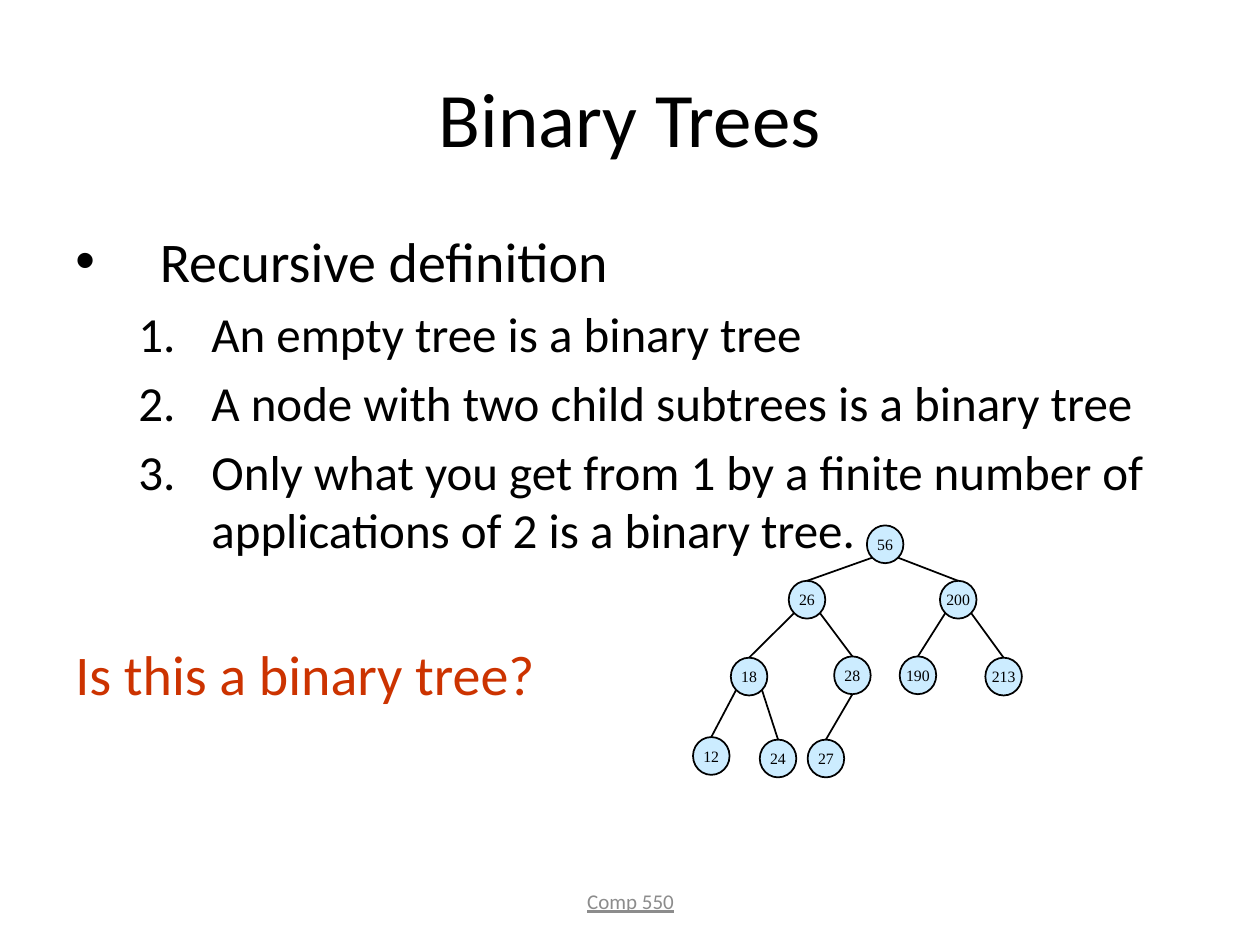
from lxml.etree import SubElement
from pptx import Presentation
from pptx.dml.color import RGBColor
from pptx.enum.shapes import MSO_CONNECTOR, MSO_SHAPE
from pptx.enum.text import MSO_ANCHOR, PP_ALIGN
from pptx.oxml.ns import qn
from pptx.util import Inches, Pt

TITLE = "Binary Trees"
FOOTER = "Comp 550"
BULLET = {"margin": 0.67, "indent": -0.67, "before": 6.4,
          "mark": ("a:buChar", {"char": "•"}), "size": 32, "color": "000000"}
NUMBERED = {"margin": 1.08, "indent": -0.58, "before": 5.6,
            "mark": ("a:buAutoNum", {"type": "arabicPeriod"}), "size": 28, "color": "000000"}
QUESTION = {"margin": 0.67, "indent": -0.67, "before": 46,
            "mark": ("a:buNone", {}), "size": 32, "color": "CC3300"}
BODY = [
    ("Recursive definition", BULLET),
    ("An empty tree is a binary tree", NUMBERED),
    ("A node with two child subtrees is a binary tree", NUMBERED),
    ("Only what you get from 1 by a finite number of applications of 2 is a binary tree.", NUMBERED),
    ("Is this a binary tree?", QUESTION),
]
NODES = {
    "56": (6.88, 4.17),
    "26": (6.26, 4.61), "200": (7.46, 4.61),
    "18": (5.8, 5.22), "28": (6.62, 5.21), "190": (7.14, 5.21), "213": (7.82, 5.22),
    "12": (5.5, 5.85), "24": (6.03, 5.87), "27": (6.41, 5.87),
}
CHILDREN = {
    "56": ["26", "200"], "26": ["18", "28"], "200": ["190", "213"],
    "18": ["12", "24"], "28": ["27"],
}
NODE_WIDTH, NODE_HEIGHT = 0.29, 0.3
DIAGONAL = 0.5 ** 0.5


def color(value):
    return RGBColor.from_string(value)


def set_font(run, size, value, name="Calibri", underline=None):
    formats = {"size": Pt(size), "name": name, "underline": underline}
    for attribute, setting in formats.items():
        setattr(run.font, attribute, setting)
    run.font.color.rgb = color(value)


def add_text(slide, left, top, width, height, anchor):
    box = slide.shapes.add_textbox(Inches(left), Inches(top), Inches(width), Inches(height))
    box.text_frame.word_wrap = True
    box.text_frame.vertical_anchor = anchor
    return box.text_frame


def add_centered_line(frame, text, *font):
    paragraph = frame.paragraphs[0]
    paragraph.alignment = PP_ALIGN.CENTER
    run = paragraph.add_run()
    run.text = text
    set_font(run, *font)


def add_body(slide):
    frame = add_text(slide, 0.5, 1.75, 9, 4.95, MSO_ANCHOR.TOP)
    for index, (text, style) in enumerate(BODY):
        paragraph = frame.add_paragraph() if index else frame.paragraphs[0]
        paragraph.space_before = Pt(style["before"])
        properties = paragraph._p.get_or_add_pPr()
        properties.set("marL", str(Inches(style["margin"])))
        properties.set("indent", str(Inches(style["indent"])))
        tag, attributes = style["mark"]
        if tag != "a:buNone":
            SubElement(properties, qn("a:buFont"), typeface="Arial" if style is BULLET else "+mj-lt")
        SubElement(properties, qn(tag), attributes)
        run = paragraph.add_run()
        run.text = text
        set_font(run, style["size"], style["color"])


def add_node(slide, label):
    left, top = NODES[label]
    shape = slide.shapes.add_shape(MSO_SHAPE.OVAL, Inches(left), Inches(top),
                                   Inches(NODE_WIDTH), Inches(NODE_HEIGHT))
    shape.shadow.inherit = False
    shape.fill.solid()
    shape.fill.fore_color.rgb = color("CCECFF")
    shape.line.color.rgb = color("000000")
    shape.line.width = Pt(1)
    frame = shape.text_frame
    frame.word_wrap = False
    frame.vertical_anchor = MSO_ANCHOR.MIDDLE
    add_centered_line(frame, label, 9, "000000", "Times New Roman")
    return shape


def add_edge(slide, parent, child, side, shapes):
    left, top = NODES[parent]
    drop = DIAGONAL if side else 1
    start_x = left + NODE_WIDTH / 2 * (1 + side * DIAGONAL)
    start_y = top + NODE_HEIGHT / 2 * (1 + drop)
    end_x, end_y = NODES[child]
    edge = slide.shapes.add_connector(MSO_CONNECTOR.STRAIGHT, Inches(start_x), Inches(start_y),
                                      Inches(end_x + NODE_WIDTH / 2), Inches(end_y))
    edge.end_connect(shapes[child], 0)
    edge.line.color.rgb = color("000000")
    edge.line.width = Pt(1)
    SubElement(edge._element.spPr, qn("a:effectLst"))


def main():
    presentation = Presentation()
    presentation.slide_width, presentation.slide_height = Inches(10), Inches(7.5)
    slide = presentation.slides.add_slide(presentation.slide_layouts[6])
    add_centered_line(add_text(slide, 0.5, 0.3, 9, 1.25, MSO_ANCHOR.MIDDLE), TITLE, 44, "000000")
    add_body(slide)
    add_centered_line(add_text(slide, 3.42, 6.95, 3.17, 0.4, MSO_ANCHOR.MIDDLE),
                      FOOTER, 12, "8C8C8C", "Calibri", True)
    shapes = {label: add_node(slide, label) for label in NODES}
    for parent, children in CHILDREN.items():
        sides = (-1, 1) if len(children) == 2 else (0,)
        for child, side in zip(children, sides):
            add_edge(slide, parent, child, side, shapes)
    presentation.save("out.pptx")


if __name__ == "__main__":
    main()
